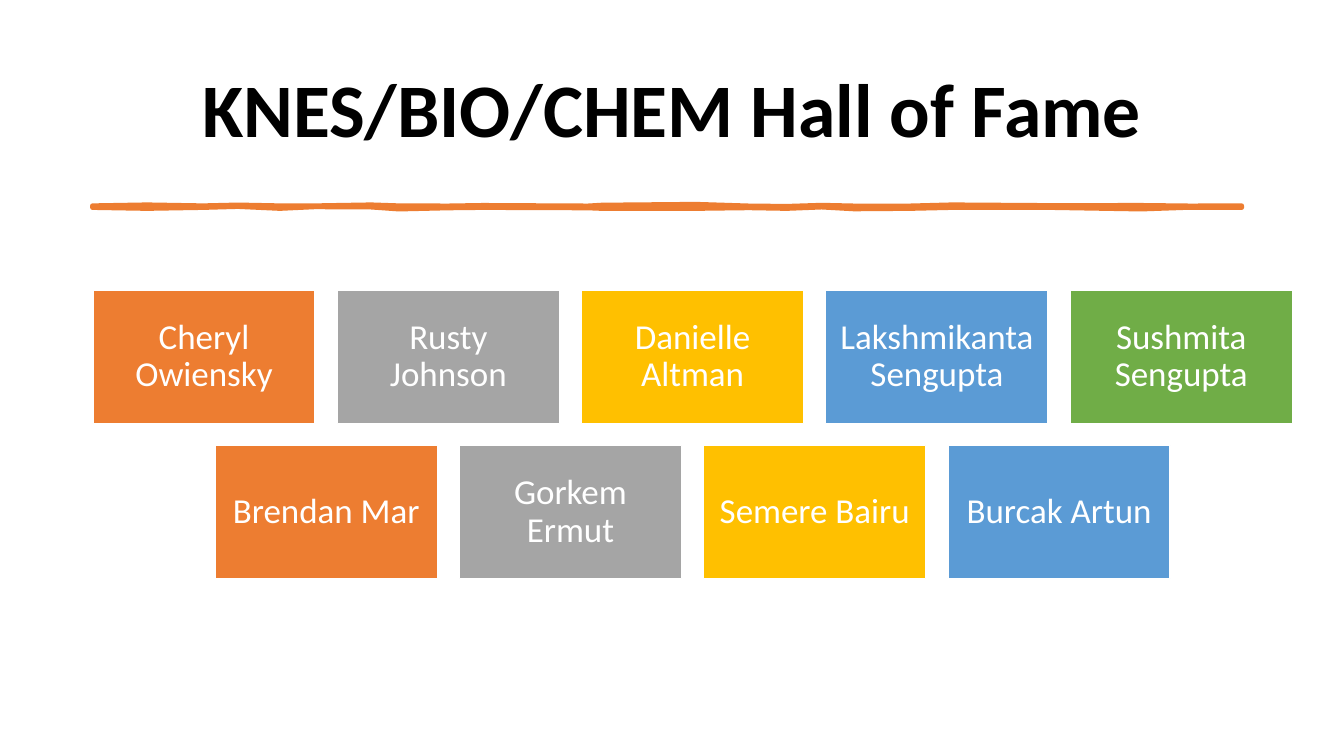
from dataclasses import dataclass

from lxml.etree import SubElement
from pptx import Presentation
from pptx.dml.color import RGBColor
from pptx.enum.shapes import MSO_SHAPE
from pptx.enum.text import MSO_ANCHOR, PP_ALIGN
from pptx.oxml.ns import qn
from pptx.slide import Slide
from pptx.util import Pt

BLACK = RGBColor(0x00, 0x00, 0x00)
WHITE = RGBColor(0xFF, 0xFF, 0xFF)
ORANGE = RGBColor(0xED, 0x7D, 0x31)
GRAY = RGBColor(0xA5, 0xA5, 0xA5)
GOLD = RGBColor(0xFF, 0xC0, 0x00)
BLUE = RGBColor(0x5B, 0x9B, 0xD5)
GREEN = RGBColor(0x70, 0xAD, 0x47)

CARD_COLORS = [ORANGE, GRAY, GOLD, BLUE, GREEN]
HONOREE_ROWS = [
    ["Cheryl Owiensky", "Rusty Johnson", "Danielle Altman",
     "Lakshmikanta Sengupta", "Sushmita Sengupta"],
    ["Brendan Mar", "Gorkem Ermut", "Semere Bairu", "Burcak Artun"],
]
CARD_WIDTH, CARD_HEIGHT, CARD_GAP = 158.7, 95.2, 15.8
GRID_CENTER, GRID_TOP = 494.7, 207.2

BRUSH_PROFILE = [
    (66, 146.9, 148.3), (105, 146.2, 149), (145, 146.9, 148.3),
    (170, 146.3, 147.6), (200, 146.9, 149), (225, 146.9, 147.8),
    (265, 146.2, 148), (285, 146.9, 149.4), (320, 147, 148.6),
    (345, 146.6, 148.3), (420, 147, 148.6), (430, 146.4, 149),
    (497, 145.8, 149), (535, 147, 148.5), (562, 147.3, 149),
    (587, 146.5, 148), (610, 147, 149.3), (650, 147, 149),
    (680, 146.2, 148.3), (750, 146.7, 148.3), (815, 146.6, 149.4),
    (850, 147, 148.2), (887, 146.9, 148.3),
]


@dataclass
class HallOfFameSlide:
    """Draws the title, brush line and name cards in one style."""

    slide: Slide
    font_name: str = "Calibri"
    title_size: float = 54
    card_size: float = 25

    def format_text(self, text_frame, text, size, color, bold=False):
        text_frame.text = text
        text_frame.word_wrap = True
        text_frame.vertical_anchor = MSO_ANCHOR.MIDDLE
        paragraph = text_frame.paragraphs[0]
        paragraph.alignment = PP_ALIGN.CENTER
        paragraph.line_spacing = 0.9
        paragraph.font.name = self.font_name
        paragraph.font.size = Pt(size)
        paragraph.font.bold = bold
        paragraph.font.color.rgb = color

    def add_title(self, text, left, top, width, height):
        title = self.slide.shapes.title
        title.left, title.top = Pt(left), Pt(top)
        title.width, title.height = Pt(width), Pt(height)
        self.format_text(title.text_frame, text, self.title_size, BLACK, True)

    def add_brush_line(self, profile, color):
        upper = [(Pt(x), Pt(top)) for x, top, bottom in profile]
        lower = [(Pt(x), Pt(bottom)) for x, top, bottom in reversed(profile)]
        builder = self.slide.shapes.build_freeform(*upper[0])
        builder.add_line_segments(upper[1:] + lower, close=True)
        shape = builder.convert_to_shape()
        shape.shadow.inherit = False
        shape.fill.solid()
        shape.fill.fore_color.rgb = color
        shape.line.color.rgb = color
        shape.line.width = Pt(3.25)
        SubElement(shape.line._get_or_add_ln(), qn("a:round"))

    def add_card(self, text, left, top, color):
        shape = self.slide.shapes.add_shape(
            MSO_SHAPE.RECTANGLE, Pt(left), Pt(top), Pt(CARD_WIDTH), Pt(CARD_HEIGHT))
        shape.shadow.inherit = False
        shape.fill.solid()
        shape.fill.fore_color.rgb = color
        shape.line.color.rgb = WHITE
        shape.line.width = Pt(1)
        frame = shape.text_frame
        frame.margin_left = frame.margin_right = Pt(7.5)
        frame.margin_top = frame.margin_bottom = Pt(7.5)
        self.format_text(frame, text, self.card_size, WHITE)

    def add_card_row(self, names, top):
        step = CARD_WIDTH + CARD_GAP
        left = GRID_CENTER - (len(names) * step - CARD_GAP) / 2
        for column, (name, color) in enumerate(zip(names, CARD_COLORS)):
            self.add_card(name, left + column * step, top, color)


def main():
    presentation = Presentation()
    presentation.slide_width, presentation.slide_height = Pt(960), Pt(540)
    slide = presentation.slides.add_slide(presentation.slide_layouts[5])
    hall = HallOfFameSlide(slide)
    hall.add_title("KNES/BIO/CHEM Hall of Fame", 66, 28.75, 828, 104.4)
    hall.add_brush_line(BRUSH_PROFILE, ORANGE)
    for row, names in enumerate(HONOREE_ROWS):
        hall.add_card_row(names, GRID_TOP + row * (CARD_HEIGHT + CARD_GAP))
    presentation.save("out.pptx")


if __name__ == "__main__":
    main()
